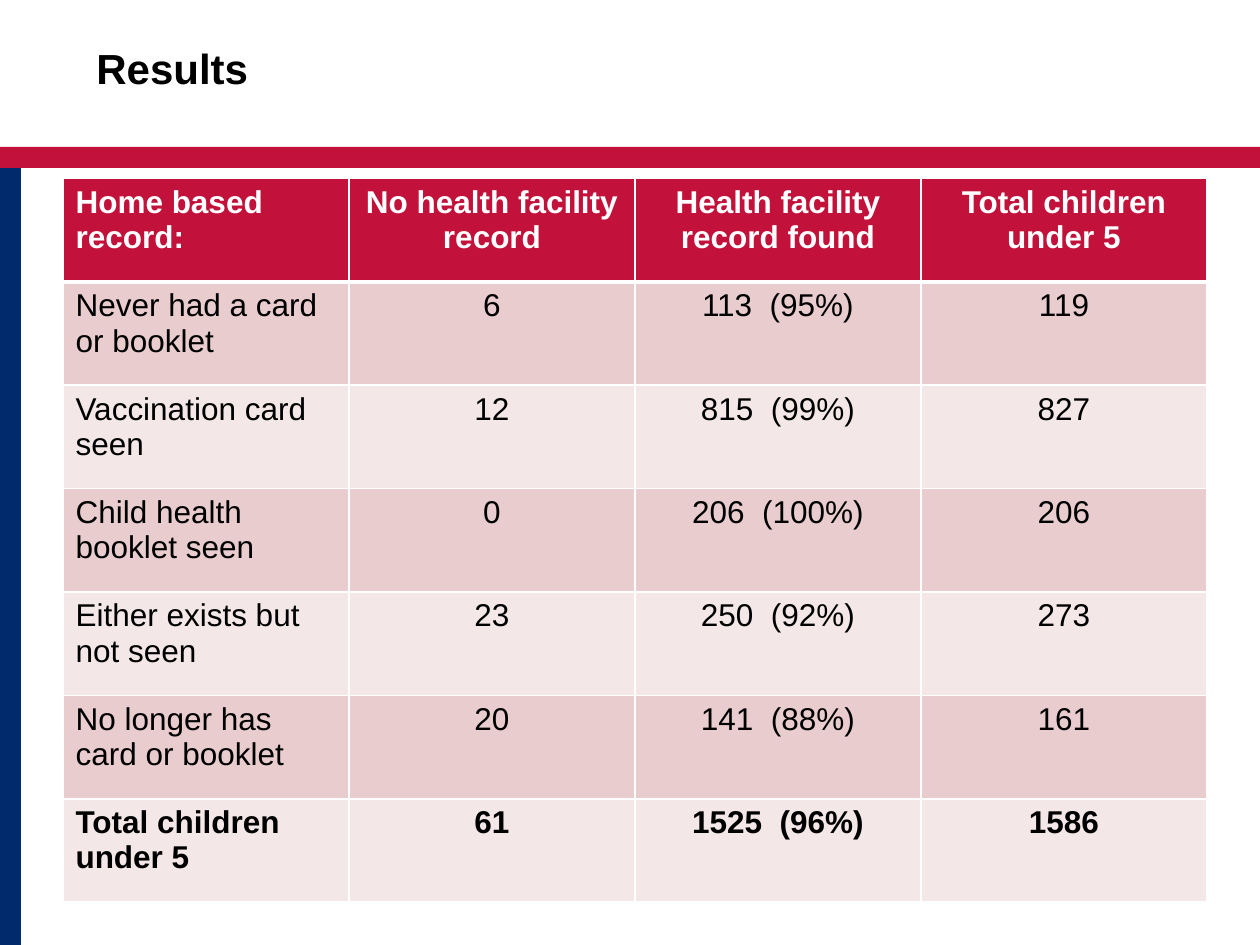
from dataclasses import dataclass

from pptx import Presentation
from pptx.dml.color import RGBColor as RGB
from pptx.enum.shapes import MSO_SHAPE as SHAPE
from pptx.enum.text import MSO_ANCHOR as ANCHOR, PP_ALIGN as ALIGN
from pptx.oxml.ns import qn
from pptx.util import Pt
from lxml.etree import SubElement


@dataclass(frozen=True)
class Theme:
    font: str = "Arial"
    title_size: int = 24
    table_size: int = 18
    red: str = "C2113A"
    navy: str = "002A6C"
    dark_band: str = "E9CCCE"
    light_band: str = "F4E7E8"
    black: str = "000000"
    white: str = "FFFFFF"


THEME = Theme()
COLUMN_WIDTH = 163.44
ROW_HEIGHT = 59.1
ROWS = [
    ("Home based record:", "No health facility record",
     "Health facility record found", "Total children under 5"),
    ("Never had a card or booklet", "6", "113  (95%)", "119"),
    ("Vaccination card seen", "12", "815  (99%)", "827"),
    ("Child health booklet seen", "0", "206  (100%)", "206"),
    ("Either exists but not seen", "23", "250  (92%)", "273"),
    ("No longer has card or booklet", "20", "141  (88%)", "161"),
    ("Total children under 5", "61", "1525  (96%)", "1586"),
]


def add_run(p, text, size, color, bold):
    r = p.add_run()
    r.text = text
    r.font.name = THEME.font
    r.font.size = Pt(size)
    r.font.bold = bold
    r.font.color.rgb = RGB.from_string(color)


def add_bar(s, left, top, width, height, color):
    sp = s.shapes.add_shape(SHAPE.RECTANGLE, Pt(left), Pt(top), Pt(width), Pt(height))
    sp.shadow.inherit = False
    sp.fill.solid()
    sp.fill.fore_color.rgb = RGB.from_string(color)
    sp.line.fill.background()


def add_title(s, text):
    tf = s.shapes.add_textbox(Pt(48), Pt(18), Pt(612), Pt(48)).text_frame
    tf.word_wrap = True
    tf.vertical_anchor = ANCHOR.TOP
    tf.margin_top = Pt(6)
    add_run(tf.paragraphs[0], text, THEME.title_size, THEME.black, True)


def set_borders(cell, top, bottom):
    """Draw white rules around a cell; top and bottom are widths in points."""
    tc_pr = cell._tc.get_or_add_tcPr()
    for side, width in (("L", 1), ("R", 1), ("T", top), ("B", bottom)):
        ln = SubElement(tc_pr, qn(f"a:ln{side}"), w=str(Pt(width)))
        fill = SubElement(ln, qn("a:solidFill"))
        SubElement(fill, qn("a:srgbClr"), val=THEME.white)


def fill_cell(cell, text, row, col):
    is_header = row == 0
    is_total = row == len(ROWS) - 1
    band = THEME.dark_band if row % 2 else THEME.light_band
    set_borders(cell, top=3 if row == 1 else 1, bottom=3 if is_header else 1)
    cell.fill.solid()
    cell.fill.fore_color.rgb = RGB.from_string(THEME.red if is_header else band)
    p = cell.text_frame.paragraphs[0]
    p.alignment = ALIGN.CENTER if col else ALIGN.LEFT
    add_run(p, text, THEME.table_size, THEME.white if is_header else THEME.black,
            is_header or is_total)


def add_results_table(s):
    rows, cols = len(ROWS), len(ROWS[0])
    table = s.shapes.add_table(rows, cols, Pt(36), Pt(102), Pt(cols * COLUMN_WIDTH),
                               Pt(rows * ROW_HEIGHT)).table
    table.horz_banding = False
    for column in table.columns:
        column.width = Pt(COLUMN_WIDTH)
    for row, texts in enumerate(ROWS):
        table.rows[row].height = Pt(ROW_HEIGHT)
        for col, text in enumerate(texts):
            fill_cell(table.cell(row, col), text, row, col)


def main():
    prs = Presentation()
    prs.slide_width, prs.slide_height = Pt(720), Pt(540)
    s = prs.slides.add_slide(prs.slide_layouts[6])
    add_bar(s, 0, 84, 720, 12, THEME.red)
    add_bar(s, 0, 96, 12, 444, THEME.navy)
    add_title(s, "Results")
    add_results_table(s)
    prs.save("out.pptx")


if __name__ == "__main__":
    main()
